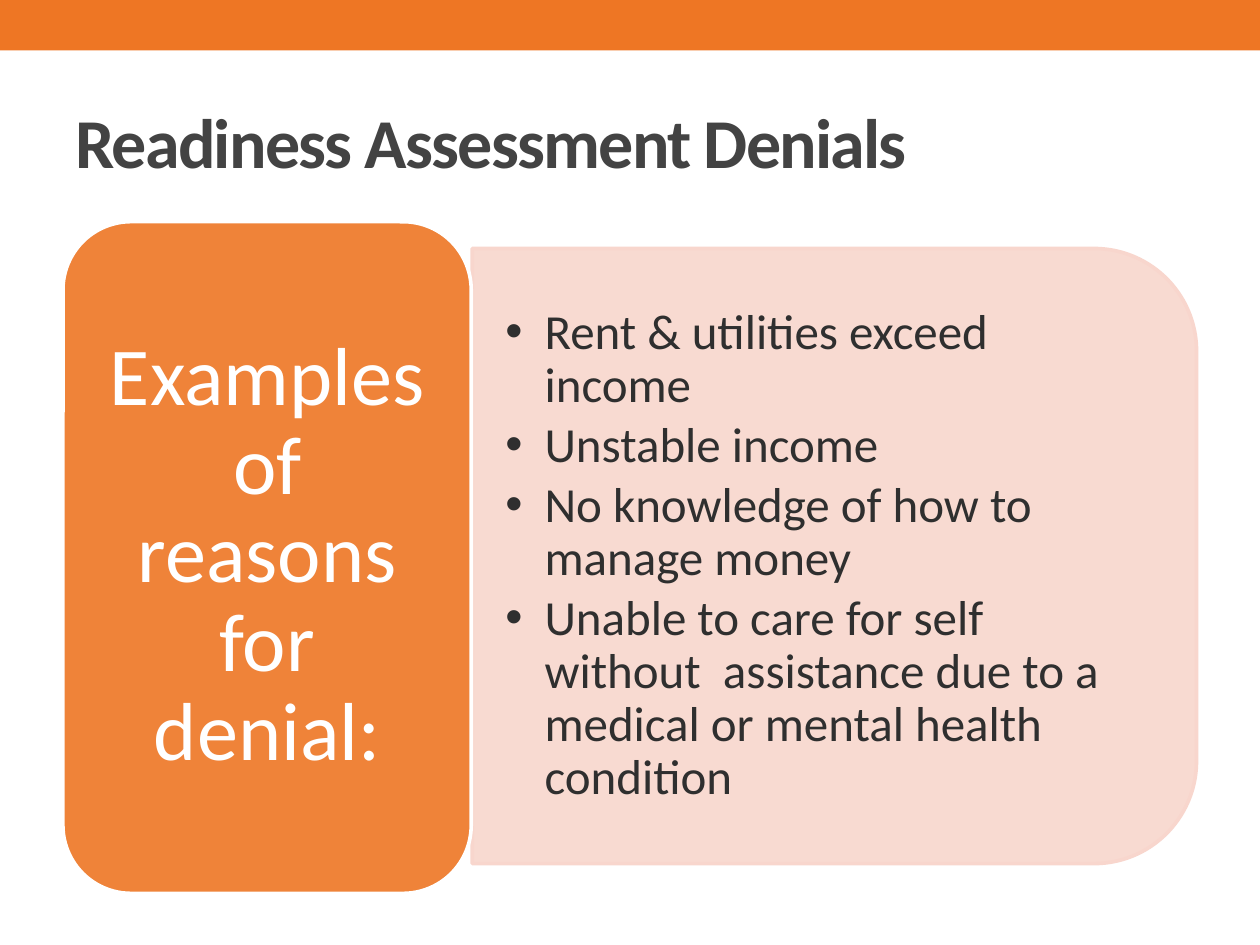
from pptx import Presentation
from pptx.dml.color import RGBColor
from pptx.enum.shapes import MSO_SHAPE as Shape
from pptx.enum.text import MSO_ANCHOR as Anchor, PP_ALIGN as Align
from pptx.oxml.ns import qn
from pptx.util import Cm, Pt
from lxml.etree import SubElement

ORANGE = RGBColor(0xEE, 0x76, 0x24)
PINK = RGBColor(0xF8, 0xD6, 0xCD)
WHITE = RGBColor(0xFF, 0xFF, 0xFF)
TITLE_GREY = RGBColor(0x43, 0x43, 0x43)
BODY_GREY = RGBColor(0x2F, 0x2F, 0x2F)

REASONS = [
    "Rent & utilities exceed income",
    "Unstable income",
    "No knowledge of how to manage money",
    "Unable to care for self without  assistance due to a medical or mental health condition",
]


def add_block(kind, left, top, width, height, color, line_color=None, opacity=100):
    block = page.shapes.add_shape(kind, Cm(left), Cm(top), Cm(width), Cm(height))
    block.shadow.inherit = False
    block.fill.solid()
    block.fill.fore_color.rgb = color
    for tint in block._element.spPr.iter(qn("a:srgbClr")):
        SubElement(tint, qn("a:alpha"), val=str(opacity * 1000))
    if line_color is None:
        block.line.fill.background()
    else:
        block.line.color.rgb = line_color
        block.line.width = Pt(2.08)
    return block


def write(box, lines, size, color, margin_x, margin_y):
    frame = box.text_frame
    frame.word_wrap = True
    frame.vertical_anchor = Anchor.MIDDLE
    frame.margin_left = frame.margin_right = Cm(margin_x)
    frame.margin_top = frame.margin_bottom = Cm(margin_y)
    frame.text = "\n".join(lines)
    for para in frame.paragraphs:
        for span in para.runs:
            span.font.name = "Calibri"
            span.font.size = Pt(size)
            span.font.color.rgb = color
    return frame.paragraphs


deck = Presentation()
deck.slide_width, deck.slide_height = Cm(25.4), Cm(19.05)
page = deck.slides.add_slide(deck.slide_layouts[6])

add_block(Shape.RECTANGLE, 0, 0, 25.4, 1.02, ORANGE)

title = page.shapes.add_textbox(Cm(1.27), Cm(1.47), Cm(22.86), Cm(2.74))
heading = write(title, ["Readiness Assessment Denials"], 40, TITLE_GREY, 0.25, 0.13)[0]
heading.runs[0].font.bold = True
heading.runs[0].font._element.set("spc", "-100")

panel = add_block(Shape.ROUND_2_SAME_RECTANGLE, 10.62, 3.91, 12.4, 14.6, PINK, PINK, 90)
panel.rotation = 90

reasons = page.shapes.add_textbox(Cm(9.5), Cm(5.61), Cm(14.02), Cm(11.2))
for para in write(reasons, REASONS, 28, BODY_GREY, 0.69, 0.36):
    para.line_spacing = 0.9
    para.space_after = Pt(4.2)
    layout = para._p.get_or_add_pPr()
    layout.set("marL", str(Cm(0.79)))
    layout.set("indent", str(Cm(-0.79)))
    SubElement(layout, qn("a:buFont"), typeface="Arial")
    SubElement(layout, qn("a:buChar"), char="•")

label = add_block(Shape.ROUNDED_RECTANGLE, 1.27, 4.47, 8.23, 13.54, ORANGE, WHITE, 90)
caption = page.shapes.add_textbox(Cm(1.68), Cm(4.85), Cm(7.42), Cm(12.73))
for para in write(caption, ["Examples of reasons for denial:"], 47, WHITE, 0.51, 0.25):
    para.alignment = Align.CENTER
    para.line_spacing = 0.9

deck.save("out.pptx")
